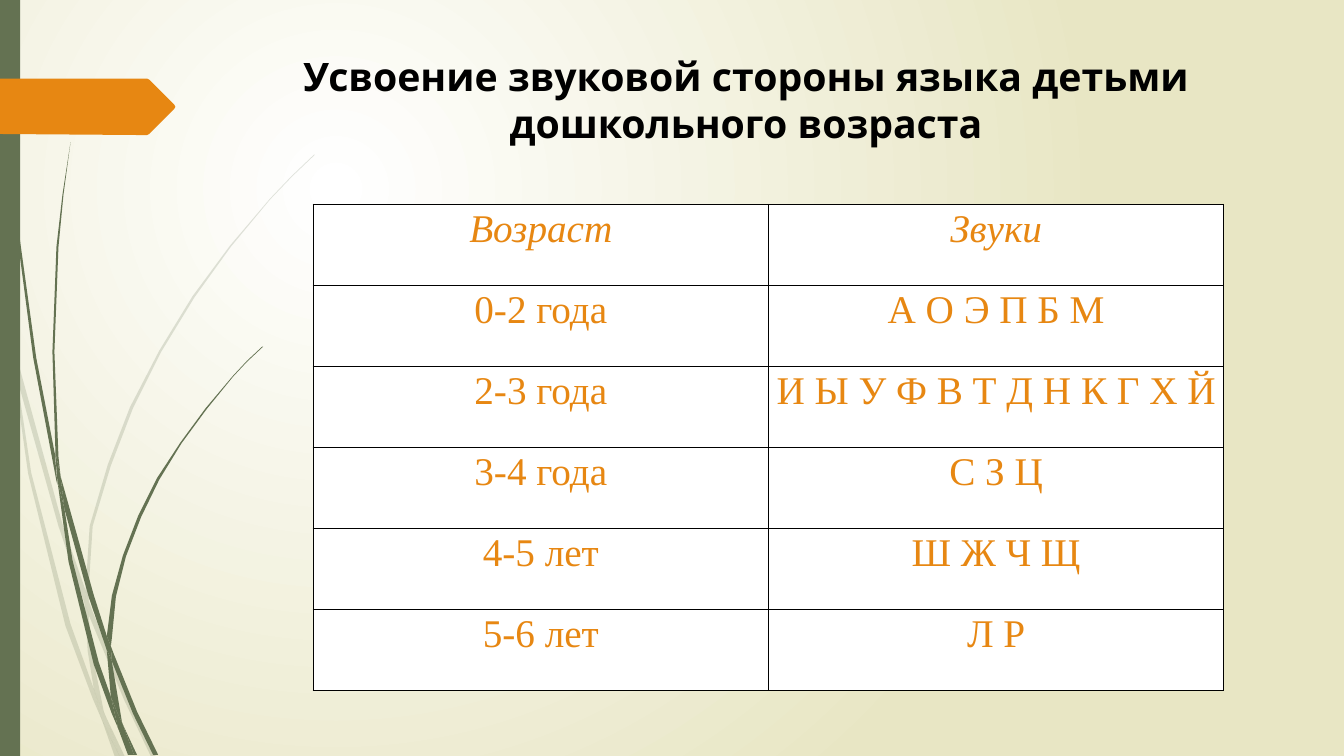
from dataclasses import dataclass

from lxml import etree
from pptx import Presentation
from pptx.dml.color import RGBColor
from pptx.enum.shapes import MSO_SHAPE
from pptx.enum.text import MSO_ANCHOR, MSO_AUTO_SIZE, PP_ALIGN
from pptx.oxml import parse_xml
from pptx.oxml.ns import nsdecls, qn
from pptx.util import Pt

CENTER = PP_ALIGN.CENTER
MIDDLE = MSO_ANCHOR.MIDDLE
FIXED_SIZE = MSO_AUTO_SIZE.NONE
RECTANGLE = MSO_SHAPE.RECTANGLE
TITLE_ONLY = 5


@dataclass(frozen=True)
class Theme:
    glow: str = "FFFFFF"
    sand: str = "E8E6C4"
    grass: str = "647252"
    accent: str = "E78712"
    ink: str = "000000"
    cell: str = "FFFFFF"
    title_font: str = "League Spartan"
    table_font: str = "Times New Roman"
    text_size: float = 28
    pale_alpha: int = 20


THEME = Theme()

TITLE = "Усвоение звуковой стороны языка детьми дошкольного возраста"
SOUNDS_BY_AGE = [
    ("Возраст", "Звуки"),
    ("0-2 года", "А О Э П Б М"),
    ("2-3 года", "И Ы У Ф В Т Д Н К Г Х Й"),
    ("3-4 года", "С З Ц"),
    ("4-5 лет", "Ш Ж Ч Щ"),
    ("5-6 лет", "Л Р"),
]

# Outlines are x, y pairs on a grid of 0.72 pt
GRID = Pt(0.72)
PALE_GRASS = [
    [(11, 350), (9, 322), (0, 282), (0, 299), (10, 344)],
    [(58, 522), (84, 599), (85, 586), (62, 520), (14, 345), (17, 376)],
    [(92, 607), (88, 596), (88, 610), (123, 694), (150, 751), (155, 751),
     (127, 692)],
    [(119, 751), (124, 751), (105, 711)],
    [(93, 683), (70, 619), (31, 469), (17, 376), (11, 350), (28, 470),
     (65, 621), (92, 693), (101, 714), (99, 707)],
    [(84, 599), (87, 646), (93, 683), (96, 692), (105, 711), (103, 706),
     (91, 646), (88, 610), (88, 608)],
    [(88, 584), (92, 522), (110, 462), (132, 405), (160, 349), (193, 295),
     (229, 245), (268, 198), (290, 175), (312, 154), (312, 153), (289, 175),
     (268, 197), (228, 244), (191, 294), (158, 348), (129, 404), (107, 461),
     (89, 522), (85, 584), (85, 586), (88, 596)],
    [(101, 714), (114, 751), (119, 751)],
    [(88, 608), (88, 610), (88, 596), (85, 586), (84, 599)],
    [(96, 692), (93, 683), (99, 707), (101, 714), (119, 751), (105, 711)],
]
DARK_GRASS = [
    [(7, 110), (17, 233), (33, 355), (56, 477), (57, 481), (55, 457),
     (55, 453), (36, 355), (19, 232), (8, 109), (5, 48), (4, 0), (3, 0),
     (4, 48)],
    [(88, 592), (106, 645), (106, 631), (93, 590), (60, 472), (64, 505)],
    [(113, 649), (110, 641), (111, 656), (132, 708), (152, 749), (157, 749),
     (136, 706)],
    [(110, 691), (98, 657), (72, 556), (64, 505), (57, 477), (68, 557),
     (93, 659), (111, 708), (117, 722), (116, 717)],
    [(60, 472), (58, 453), (54, 349), (58, 245), (63, 193), (70, 141),
     (62, 193), (56, 245), (52, 349), (55, 449)],
    [(133, 749), (136, 749), (122, 719)],
    [(57, 477), (64, 505), (60, 472), (55, 449), (55, 453)],
    [(111, 633), (115, 592), (125, 552), (140, 513), (158, 476), (180, 440),
     (205, 406), (231, 374), (245, 359), (261, 344), (260, 344), (245, 358),
     (231, 373), (204, 405), (179, 439), (156, 474), (137, 512), (122, 551),
     (111, 591), (106, 631), (110, 641)],
    [(117, 722), (127, 749), (131, 749)],
    [(106, 645), (110, 691), (116, 706), (122, 719), (121, 716), (111, 656),
     (109, 651)],
    [(106, 645), (109, 651), (111, 656), (110, 641), (106, 631)],
    [(116, 706), (110, 691), (116, 717), (117, 722), (130, 749), (133, 749),
     (122, 719)],
]
ARROW_TAB = [(173, 108), (148, 133), (146, 134), (136, 134), (0, 133),
             (0, 78), (146, 78), (148, 79), (173, 104), (174, 106)]


def paint_background(slide):
    """Radial glow centred in the upper left quarter."""
    slide.element.cSld.insert(0, parse_xml(
        f'<p:bg {nsdecls("p", "a")}><p:bgPr><a:gradFill rotWithShape="1"><a:gsLst>'
        f'<a:gs pos="0"><a:srgbClr val="{THEME.glow}"/></a:gs>'
        f'<a:gs pos="100000"><a:srgbClr val="{THEME.sand}"/></a:gs></a:gsLst>'
        '<a:path path="circle">'
        '<a:fillToRect l="50000" t="50000" r="100000" b="100000"/></a:path>'
        '</a:gradFill><a:effectLst/></p:bgPr></p:bg>'))


def paint(shape, color, alpha=100):
    shape.shadow.inherit = False
    shape.fill.solid()
    shape.fill.fore_color.rgb = RGBColor.from_string(color)
    shape.line.fill.background()
    if alpha < 100:
        tint = shape.element.spPr.find(f'{qn("a:solidFill")}/{qn("a:srgbClr")}')
        etree.SubElement(tint, qn("a:alpha"), val=str(alpha * 1000))


def draw_outline(shapes, points, color, alpha=100):
    builder = shapes.build_freeform(*points[0], scale=GRID)
    builder.add_line_segments(points[1:], close=True)
    paint(builder.convert_to_shape(), color, alpha)


def draw_grass(slide, blades, alpha=100):
    clump = slide.shapes.add_group_shape()
    for blade in blades:
        draw_outline(clump.shapes, blade, THEME.grass, alpha)


def write_text(frame, text, *, font, color, size=THEME.text_size, bold=False,
               italic=False, spacing=1.0):
    paragraph = frame.paragraphs[0]
    paragraph.alignment = CENTER
    paragraph.line_spacing = spacing
    run = paragraph.add_run()
    run.text = text
    run.font.name = font
    run.font.size = Pt(size)
    run.font.bold = bold
    run.font.italic = italic
    run.font.color.rgb = RGBColor.from_string(color)


def place_title(slide):
    title = slide.shapes.title
    title.left, title.top = Pt(129.6), Pt(34.6)
    title.width, title.height = Pt(806.4), Pt(97.2)
    frame = title.text_frame
    frame.word_wrap = True
    frame.auto_size = FIXED_SIZE
    frame.vertical_anchor = MIDDLE
    frame.margin_bottom = Pt(27.6)
    write_text(frame, TITLE, font=THEME.title_font, color=THEME.ink, bold=True)


def outline_cell(cell):
    properties = cell._tc.get_or_add_tcPr()
    for position, side in enumerate(("lnL", "lnR", "lnT", "lnB")):
        properties.insert(position, parse_xml(
            f'<a:{side} {nsdecls("a")} w="{Pt(1)}"><a:solidFill>'
            f'<a:srgbClr val="{THEME.ink}"/></a:solidFill></a:{side}>'))


def add_sounds_table(slide):
    row_height, column_width = 57.86, 325.2
    row_count, column_count = len(SOUNDS_BY_AGE), len(SOUNDS_BY_AGE[0])
    table = slide.shapes.add_table(
        row_count, column_count, Pt(223.7), Pt(146.1),
        Pt(column_width * column_count), Pt(row_height * row_count)).table
    table.first_row = table.horz_banding = False
    for row_index, entries in enumerate(SOUNDS_BY_AGE):
        for column_index, entry in enumerate(entries):
            cell = table.cell(row_index, column_index)
            cell.margin_left = cell.margin_right = Pt(5)
            cell.margin_top = cell.margin_bottom = 0
            cell.fill.solid()
            cell.fill.fore_color.rgb = RGBColor.from_string(THEME.cell)
            outline_cell(cell)
            write_text(cell.text_frame, entry, font=THEME.table_font,
                       color=THEME.accent, italic=row_index == 0, spacing=1.07)


def main():
    presentation = Presentation()
    presentation.slide_width, presentation.slide_height = Pt(960), Pt(540)
    slide = presentation.slides.add_slide(presentation.slide_layouts[TITLE_ONLY])
    paint_background(slide)
    draw_grass(slide, PALE_GRASS, THEME.pale_alpha)
    draw_grass(slide, DARK_GRASS)
    side_band = slide.shapes.add_shape(RECTANGLE, 0, 0, Pt(14.4), Pt(540))
    paint(side_band, THEME.grass)
    draw_outline(slide.shapes, ARROW_TAB, THEME.accent)
    add_sounds_table(slide)
    place_title(slide)
    presentation.save("out.pptx")


if __name__ == "__main__":
    main()
